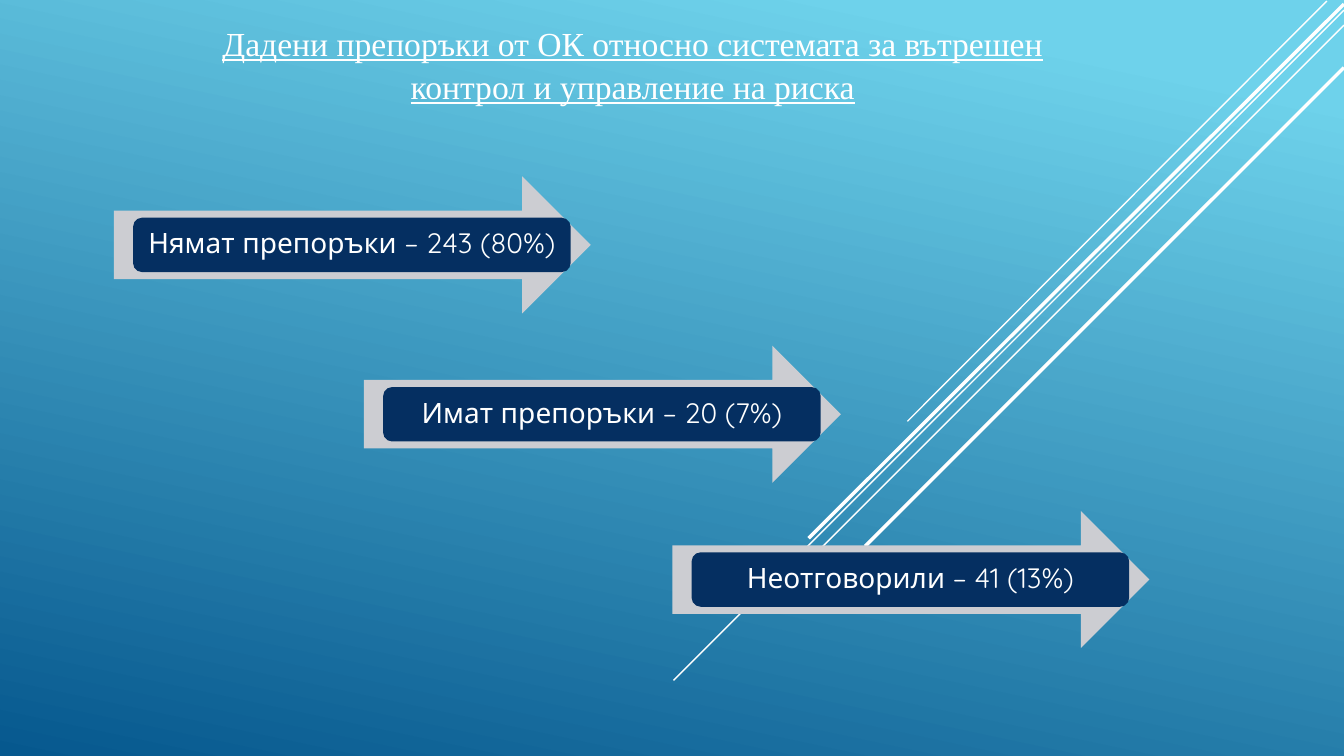
from dataclasses import dataclass

from lxml import etree
from pptx import Presentation
from pptx.dml.color import RGBColor
from pptx.enum import shapes, text
from pptx.oxml import ns
from pptx.util import Inches, Pt


@dataclass(frozen=True)
class Theme:
    white: RGBColor = RGBColor.from_string("FFFFFF")
    arrow: RGBColor = RGBColor.from_string("CCCDD2")
    label: RGBColor = RGBColor.from_string("052F61")
    sky: RGBColor = RGBColor.from_string("6ED2EB")
    sea: RGBColor = RGBColor.from_string("06588E")
    title_font: str = "Times New Roman"
    label_font: str = "Quicksand"
    title_size: Pt = Pt(24)
    label_size: Pt = Pt(20)
    thin: Pt = Pt(1)
    thick: Pt = Pt(2.5)


THEME = Theme()

# Upper right end, lower left end, width
RAYS = [
    ((13.16, 0.01), (9, 4.18), THEME.thin),
    ((13.33, 0.1), (6.68, 6.75), THEME.thin),
    ((13.33, 0.25), (7.91, 5.67), THEME.thin),
    ((13.33, 0.04), (8.02, 5.34), THEME.thick),
    ((13.33, 0.67), (8.58, 5.42), THEME.thick),
]

# Left and top of the arrow, label
ANSWERS = [
    (1.13, 1.75, "Нямат препоръки – 243 (80%)"),
    (3.61, 3.43, "Имат препоръки – 20 (7%)"),
    (6.67, 5.07, "Неотговорили – 41 (13%)"),
]


def paint_background(page):
    fill = page.background.fill
    fill.gradient()
    fill.gradient_angle = 258
    stops = [(0.1, THEME.sky), (1, THEME.sea)]
    for stop, (position, color) in zip(fill.gradient_stops, stops):
        stop.position = position
        stop.color.rgb = color


def add_ray(page, start, end, width):
    ray = page.shapes.add_connector(
        shapes.MSO_CONNECTOR.STRAIGHT, *map(Inches, start + end))
    ray.line.color.rgb = THEME.white
    ray.line.width = width
    etree.SubElement(ray._element.spPr, ns.qn("a:effectLst"))


def write(box, words, font_name, size, anchor):
    """Put one centred white paragraph into the box and return it."""
    frame = box.text_frame
    frame.word_wrap = True
    frame.vertical_anchor = anchor
    para = frame.paragraphs[0]
    para.text = words
    para.alignment = text.PP_ALIGN.CENTER
    para.font.name = font_name
    para.font.size = size
    para.font.color.rgb = THEME.white
    return para


def add_title(page, words):
    box = page.shapes.add_textbox(
        Inches(1.9), Inches(0), Inches(8.75), Inches(1.1))
    para = write(box, words, THEME.title_font, THEME.title_size,
                 text.MSO_ANCHOR.BOTTOM)
    para.font.underline = True
    para.line_spacing = 1.06


def add_plain_shape(parent, kind, left, top, width, height, color):
    shape = parent.shapes.add_shape(
        kind, Inches(left), Inches(top), Inches(width), Inches(height))
    shape.shadow.inherit = False
    shape.fill.solid()
    shape.fill.fore_color.rgb = color
    shape.line.fill.background()
    return shape


def add_answer(page, left, top, words):
    """Add an arrow with a rounded label on it, as one group."""
    group = page.shapes.add_group_shape()
    add_plain_shape(group, shapes.MSO_SHAPE.RIGHT_ARROW,
                    left, top, 4.73, 1.36, THEME.arrow)
    label = add_plain_shape(group, shapes.MSO_SHAPE.ROUNDED_RECTANGLE,
                            left + 0.19, top + 0.41, 4.34, 0.54, THEME.label)
    label.text_frame.margin_left = label.text_frame.margin_right = Inches(0.08)
    para = write(label, words, THEME.label_font, THEME.label_size,
                 text.MSO_ANCHOR.MIDDLE)
    para.line_spacing = 0.9


def main():
    deck = Presentation()
    deck.slide_width, deck.slide_height = Inches(13.33), Inches(7.5)
    page = deck.slides.add_slide(deck.slide_layouts[6])
    paint_background(page)
    for ray in RAYS:
        add_ray(page, *ray)
    add_title(page, "Дадени препоръки от ОК относно системата за вътрешен "
                    "контрол и управление на риска")
    for answer in ANSWERS:
        add_answer(page, *answer)
    deck.save("out.pptx")


if __name__ == "__main__":
    main()
